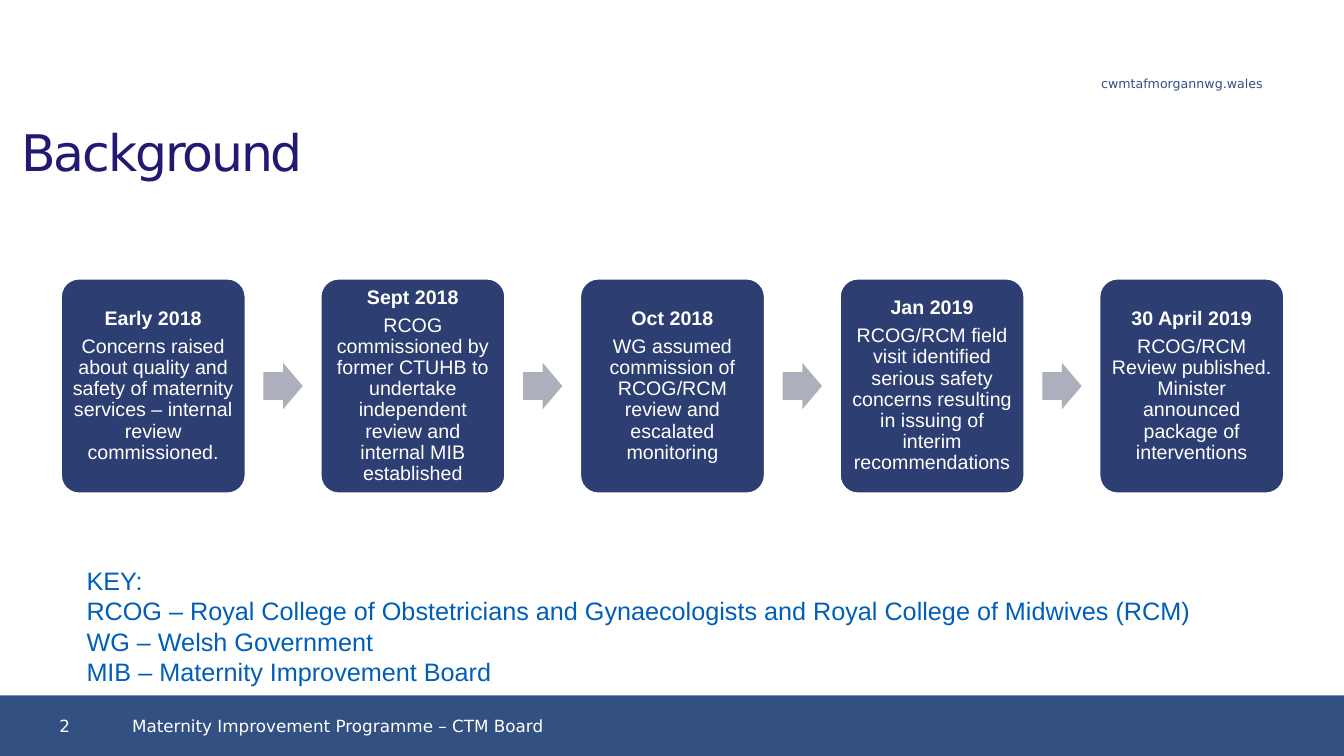
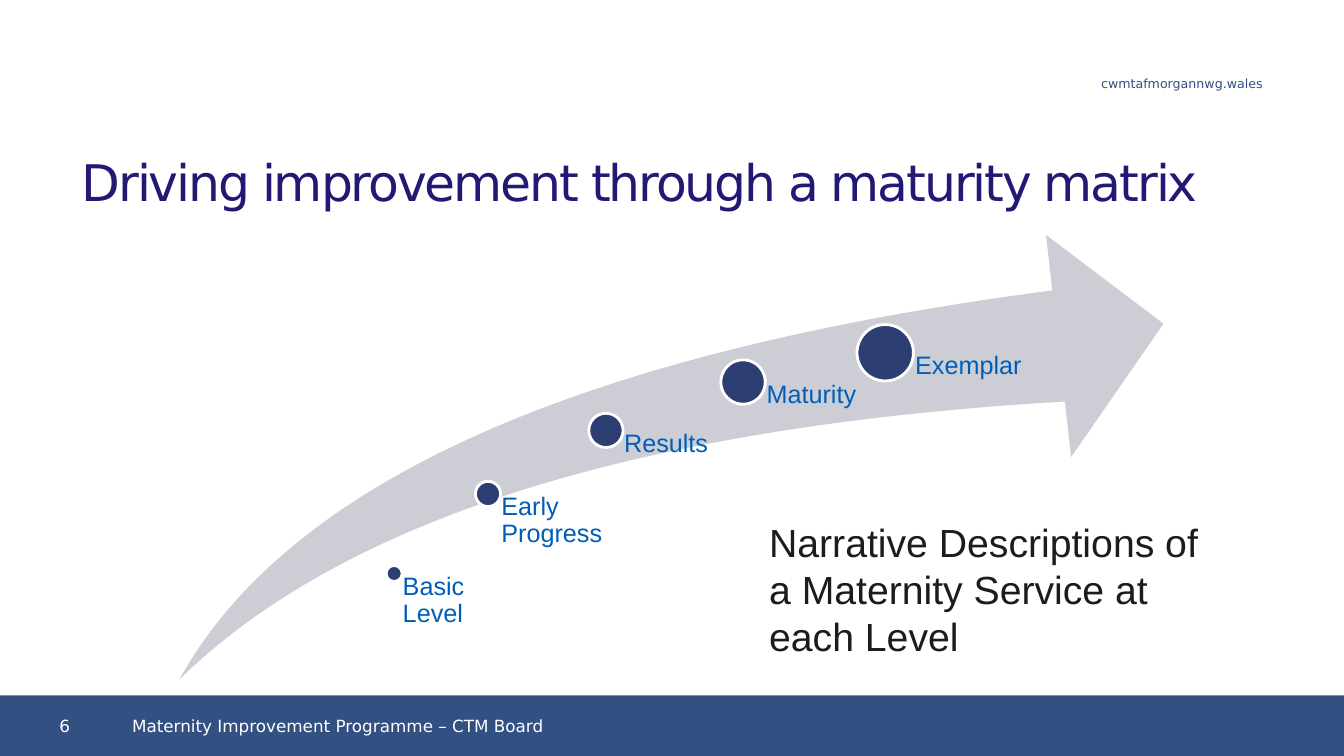
from dataclasses import dataclass

from pptx import Presentation
from pptx.dml.color import RGBColor
from pptx.enum import shapes, text
from pptx.util import Inches, Pt


@dataclass(frozen=True)
class Theme:
    # Colours
    band: str = "335083"
    title: str = "211973"
    node: str = "2C3E72"
    step_arrow: str = "ADAFBC"
    swoosh: str = "CDCED5"
    accent: str = "005EB8"
    dark: str = "1C1C1C"
    white: str = "FFFFFF"
    # Fonts
    heading_font: str = "DejaVu Sans"
    body_font: str = "Arial"
    # Type sizes
    web_size: int = 9
    footer_size: int = 12
    card_size: int = 14
    label_size: int = 18
    note_size: int = 28
    title_size: int = 36


THEME = Theme()
WIDTH, HEIGHT = 13.33, 7.5
FOOTER_TEXT = "Maternity Improvement Programme – CTM Board"
DEFAULT_INSETS = (0.1, 0.05, 0.1, 0.05)

MILESTONES = [
    ("Early 2018", "Concerns raised about quality and safety of maternity "
     "services – internal review commissioned."),
    ("Sept 2018", "RCOG commissioned by former CTUHB to undertake independent "
     "review and internal MIB established"),
    ("Oct 2018", "WG assumed commission of RCOG/RCM review and escalated monitoring"),
    ("Jan 2019", "RCOG/RCM field visit identified serious safety concerns "
     "resulting in issuing of interim recommendations"),
    ("30 April 2019", "RCOG/RCM Review published. Minister announced package "
     "of interventions"),
]
KEY_LINES = [
    "KEY:",
    "RCOG – Royal College of Obstetricians and Gynaecologists and Royal College of Midwives (RCM)",
    "WG – Welsh Government",
    "MIB – Maternity Improvement Board",
]
# Label, dot centre within the arrow box, dot diameter, label width
LEVELS = [
    ("Basic Level", 2.13, 3.36, 0.16, 0.92),
    ("Early Progress", 3.06, 2.57, 0.25, 1.17),
    ("Results", 4.23, 1.94, 0.34, 1.36),
    ("Maturity", 5.59, 1.46, 0.44, 1.41),
    ("Exemplar", 7.0, 1.17, 0.56, 1.41),
]


def write_text(shape, lines, *, size, color, font=THEME.body_font, bold_first=False,
               align=text.PP_ALIGN.LEFT, anchor=text.MSO_ANCHOR.TOP,
               insets=DEFAULT_INSETS, line_spacing=None, space_after=None,
               tracking=None):
    """Fill a shape with one paragraph per line, all in one format."""
    frame = shape.text_frame
    frame.word_wrap = True
    frame.vertical_anchor = anchor
    (frame.margin_left, frame.margin_top,
     frame.margin_right, frame.margin_bottom) = map(Inches, insets)
    for index, line in enumerate(lines):
        paragraph = frame.add_paragraph() if index else frame.paragraphs[0]
        paragraph.alignment = align
        if line_spacing:
            paragraph.line_spacing = line_spacing
        if space_after:
            paragraph.space_after = Pt(space_after)
        run = paragraph.add_run()
        run.text = line
        run.font.name = font
        run.font.size = Pt(size)
        run.font.bold = bold_first and index == 0
        run.font.color.rgb = RGBColor.from_string(color)
        if tracking:
            run._r.get_or_add_rPr().set("spc", str(int(tracking * 100)))


def add_text(slide, box, lines, **style):
    textbox = slide.shapes.add_textbox(*map(Inches, box))
    write_text(textbox, lines, **style)
    return textbox


def add_shape(slide, kind, box, fill, *, outline=None, adjustments=()):
    shape = slide.shapes.add_shape(kind, *map(Inches, box))
    shape.shadow.inherit = False
    shape.fill.solid()
    shape.fill.fore_color.rgb = RGBColor.from_string(fill)
    if outline:
        shape.line.color.rgb = RGBColor.from_string(outline)
        shape.line.width = Pt(2)
    else:
        shape.line.fill.background()
    for index, value in enumerate(adjustments):
        shape.adjustments[index] = value
    return shape


def add_base(presentation, number, title, title_box):
    """Blank slide with web address, title and footer band."""
    slide = presentation.slides.add_slide(presentation.slide_layouts[6])
    add_text(slide, (8.87, 0.7, 3.75, 0.25), ["cwmtafmorgannwg.wales"],
             size=THEME.web_size, color=THEME.band, font=THEME.heading_font,
             align=text.PP_ALIGN.RIGHT)
    add_text(slide, title_box, [title], size=THEME.title_size, color=THEME.title,
             font=THEME.heading_font, insets=(0, 0, 0, 0), tracking=-1.5)

    # Footer band with slide number
    footer_style = dict(size=THEME.footer_size, color=THEME.white,
                        font=THEME.heading_font, anchor=text.MSO_ANCHOR.MIDDLE)
    band_height = 0.6
    top = HEIGHT - band_height
    band = add_shape(slide, shapes.MSO_SHAPE.RECTANGLE,
                     (0, top, WIDTH, band_height), THEME.band)
    write_text(band, [str(number)], insets=(0.59, 0, 0.1, 0), **footer_style)
    add_text(slide, (1.31, top, 11.23, band_height), [FOOTER_TEXT],
             insets=(0, 0, 0, 0), **footer_style)
    return slide


def add_timeline(slide, box, milestones):
    """Equal cards across the box, with an arrow in each gap."""
    left, top, width, height = box
    card_width, arrow_width, arrow_height = 1.84, 0.39, 0.46
    gap = (width - card_width * len(milestones)) / (len(milestones) - 1)
    for index, milestone in enumerate(milestones):
        card_left = left + index * (card_width + gap)
        card = add_shape(slide, shapes.MSO_SHAPE.ROUNDED_RECTANGLE,
                         (card_left, top, card_width, height), THEME.node,
                         outline=THEME.white, adjustments=[0.1])
        write_text(card, milestone, size=THEME.card_size, color=THEME.white,
                   bold_first=True, align=text.PP_ALIGN.CENTER,
                   anchor=text.MSO_ANCHOR.MIDDLE, insets=(0.06,) * 4,
                   line_spacing=0.9, space_after=4.9)
        if index < len(milestones) - 1:
            arrow_left = card_left + card_width + (gap - arrow_width) / 2
            arrow_top = top + (height - arrow_height) / 2
            add_shape(slide, shapes.MSO_SHAPE.RIGHT_ARROW,
                      (arrow_left, arrow_top, arrow_width, arrow_height),
                      THEME.step_arrow, adjustments=[0.6, 0.5])


def add_maturity_arrow(slide, box, levels):
    """Swoosh arrow with growing dots; each label starts at its dot's centre."""
    left, top, _, height = box
    add_shape(slide, shapes.MSO_SHAPE.SWOOSH_ARROW, box, THEME.swoosh,
              adjustments=[0.25, 0.25])
    for label, x, y, diameter, label_width in levels:
        radius = diameter / 2
        add_shape(slide, shapes.MSO_SHAPE.OVAL,
                  (left + x - radius, top + y - radius, diameter, diameter),
                  THEME.node, outline=THEME.white)
        add_text(slide, (left + x, top + y, label_width, height - y), [label],
                 size=THEME.label_size, color=THEME.accent,
                 insets=(diameter * 0.53, 0, 0, 0), line_spacing=0.9)


def build_background(presentation):
    slide = add_base(presentation, 2, "Background", (0.21, 1.2, 12.31, 0.98))
    add_timeline(slide, (0.6, 2.76, 12.14, 2.14), MILESTONES)
    add_text(slide, (0.76, 5.56, 11.98, 1.31), KEY_LINES,
             size=THEME.label_size, color=THEME.accent)


def build_maturity(presentation):
    slide = add_base(presentation, 6, "Driving improvement through a maturity matrix",
                     (0.81, 1.5, 11.71, 0.68))
    add_maturity_arrow(slide, (1.78, 2.33, 9.76, 4.41), LEVELS)
    add_text(slide, (7.53, 5.09, 4.72, 1.51),
             ["Narrative Descriptions of a Maternity Service at each Level"],
             size=THEME.note_size, color=THEME.dark)


def main():
    presentation = Presentation()
    presentation.slide_width = Inches(WIDTH)
    presentation.slide_height = Inches(HEIGHT)
    build_background(presentation)
    build_maturity(presentation)
    presentation.save("out.pptx")


if __name__ == "__main__":
    main()
